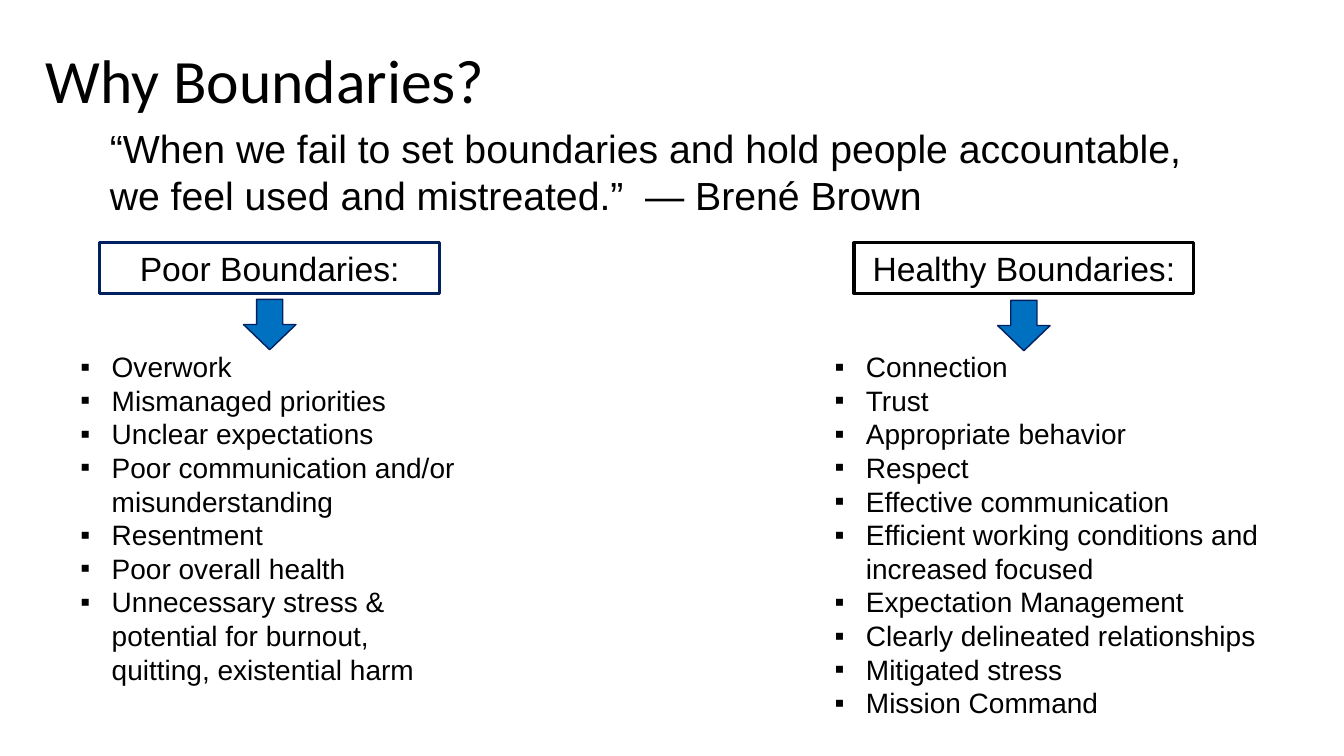
from lxml.etree import SubElement
from pptx import Presentation
from pptx.dml.color import RGBColor
from pptx.enum.shapes import MSO_SHAPE as Shape
from pptx.enum.text import MSO_ANCHOR as Anchor, PP_ALIGN as Align
from pptx.oxml.ns import qn
from pptx.util import Inches, Pt

COLORS = {"text": "000000", "navy": "002060", "arrow": "0070C0"}
POOR = [
    "Overwork",
    "Mismanaged priorities",
    "Unclear expectations",
    "Poor communication and/or misunderstanding",
    "Resentment",
    "Poor overall health",
    "Unnecessary stress & potential for burnout, quitting, existential harm",
]
HEALTHY = [
    "Connection",
    "Trust",
    "Appropriate behavior",
    "Respect",
    "Effective communication",
    "Efficient working conditions and increased focused",
    "Expectation Management",
    "Clearly delineated relationships",
    "Mitigated stress",
    "Mission Command",
]


def color(name):
    """Return the named palette colour."""
    return RGBColor.from_string(COLORS[name])


def place(shape, left, top, width, height):
    """Set a shape's position and size in inches."""
    shape.left, shape.top = Inches(left), Inches(top)
    shape.width, shape.height = Inches(width), Inches(height)


def add_bullet(paragraph, indent=0.31):
    """Give a paragraph a square bullet with a hanging indent."""
    properties = paragraph._p.get_or_add_pPr()
    properties.set("marL", str(Inches(indent)))
    properties.set("indent", str(-Inches(indent)))
    SubElement(properties, qn("a:buFont"), typeface="Arial")
    SubElement(properties, qn("a:buChar"), char="▪")


def write(shape, *lines, size, font="Arial", align=Align.LEFT,
          anchor=Anchor.TOP, spacing=None, bullets=False):
    """Fill a shape with one formatted paragraph for each line."""
    frame = shape.text_frame
    frame.word_wrap = True
    frame.vertical_anchor = anchor
    frame.text = "\n".join(lines)
    for paragraph in frame.paragraphs:
        paragraph.alignment = align
        if spacing:
            paragraph.line_spacing = spacing
        if bullets:
            add_bullet(paragraph)
        for run in paragraph.runs:
            run.font.name, run.font.size = font, Pt(size)
            run.font.color.rgb = color("text")


def add_text(slide, box, *lines, **style):
    """Add a wrapped text box."""
    write(slide.shapes.add_textbox(*map(Inches, box)), *lines, **style)


def add_outlined(slide, kind, box, line, weight, fill=None):
    """Add a preset shape with an outline and an optional fill."""
    shape = slide.shapes.add_shape(kind, *map(Inches, box))
    shape.shadow.inherit = False
    shape.line.color.rgb = color(line)
    shape.line.width = Pt(weight)
    if fill:
        shape.fill.solid()
        shape.fill.fore_color.rgb = color(fill)
    else:
        shape.fill.background()
    return shape


def add_header(slide, left, top, width):
    """Place the title and the quotation under it."""
    title = slide.shapes.title
    place(title, left, top, width, 0.99)
    write(title, "Why Boundaries?", size=44, font="Calibri",
          anchor=Anchor.MIDDLE, spacing=0.9)
    add_text(slide, (left + 0.64, top + 0.85, width - 0.15, 1.04),
             "“When we fail to set boundaries and hold people accountable, "
             "we feel used and mistreated.”  ― Brené Brown", size=28)


def add_column(slide, left, top, width, height, heading, items, line, arrow_gap):
    """Place a boxed heading, an arrow and a bulleted list."""
    box_left, box_width, box_height = left + 0.29, 3.37, 0.5
    box = add_outlined(slide, Shape.RECTANGLE,
                       (box_left, top, box_width, box_height), line, 2.25)
    write(box, heading, size=24, align=Align.CENTER)
    add_text(slide, (left, top + 1.01, width, height - 1.01), *items,
             size=20, bullets=True)
    arrow_width = 0.52
    arrow_left = box_left + (box_width - arrow_width) / 2
    add_outlined(slide, Shape.DOWN_ARROW,
                 (arrow_left, top + box_height + arrow_gap, arrow_width, 0.5),
                 "navy", 1, "arrow")


def main():
    """Build and save the slide."""
    presentation = Presentation()
    presentation.slide_width = Inches(13.33)
    presentation.slide_height = Inches(7.5)
    slide = presentation.slides.add_slide(presentation.slide_layouts[5])
    add_header(slide, 0.35, 0.33, 11.5)
    add_column(slide, 0.7, 2.41, 3.96, 4.48, "Poor Boundaries:", POOR, "navy", 0.06)
    add_column(slide, 8.18, 2.41, 4.68, 4.81, "Healthy Boundaries:", HEALTHY, "text", 0.07)
    presentation.save("out.pptx")


if __name__ == "__main__":
    main()
